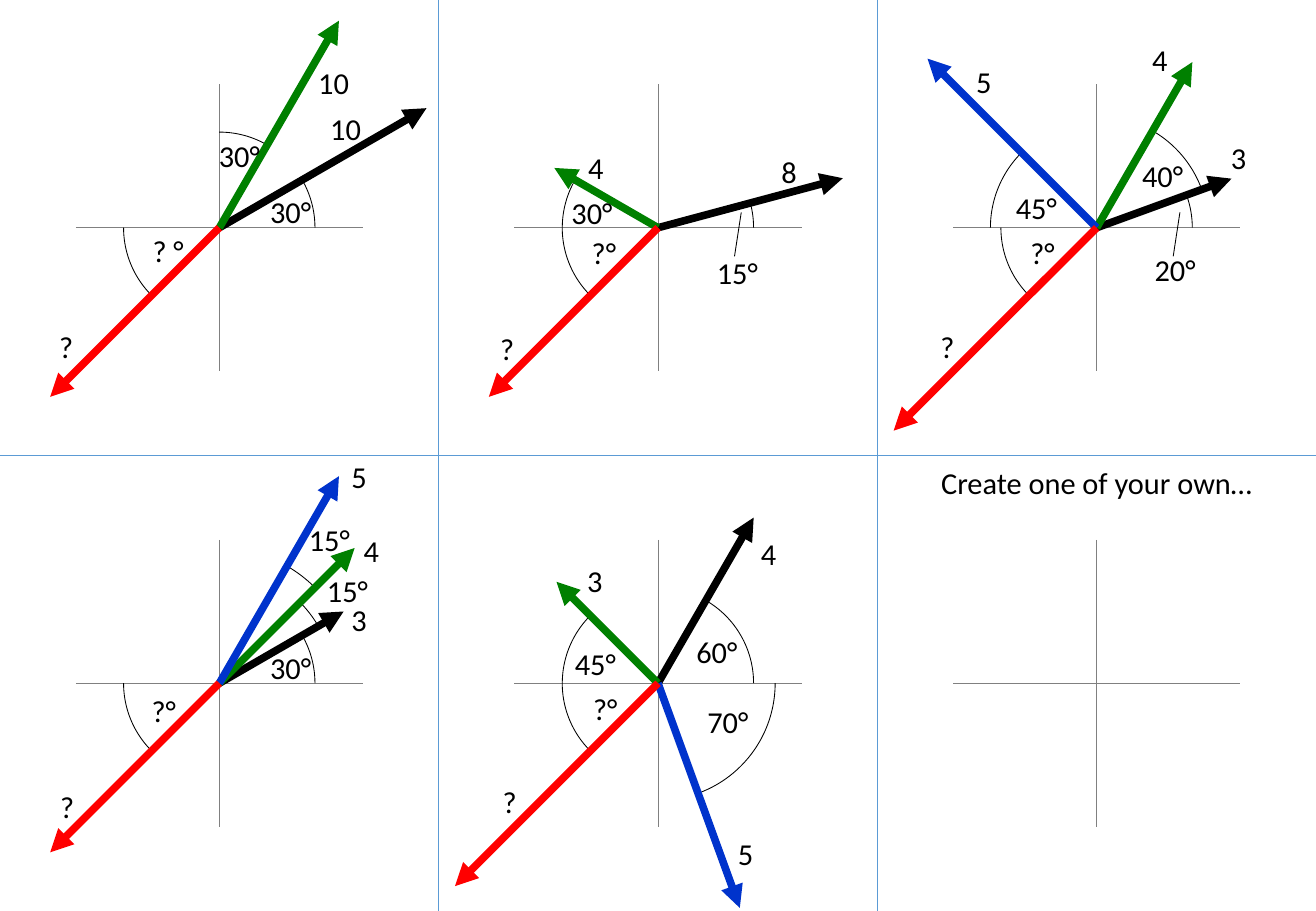
from math import cos, radians, sin

from lxml import etree
from pptx import Presentation
from pptx.dml.color import RGBColor
from pptx.enum.shapes import MSO_CONNECTOR, MSO_SHAPE
from pptx.enum.text import PP_ALIGN
from pptx.oxml.ns import qn
from pptx.util import Cm, Pt

STRAIGHT = MSO_CONNECTOR.STRAIGHT
ARC = MSO_SHAPE.ARC
CENTER = PP_ALIGN.CENTER

COLORS = {"black": "000000", "green": "008000", "blue": "0033CC", "red": "FF0000",
          "axis": "808080", "divider": "5B9BD5", "white": "FFFFFF"}
WIDTH, HEIGHT = 27.51, 19.05
COLS, ROWS = 3, 2
CELL_W, CELL_H = WIDTH / COLS, HEIGHT / ROWS
AXIS = 3  # half length of each axis
R = 2     # usual arc radius

# Lengths in cm, angles in degrees counterclockwise from the right,
# label centres measured right and down from the panel's origin
# arrows: colour, length, angle / arcs: radius, from, to / labels: text, x, y
PANELS = [
    {"arrows": [("black", 5, 30), ("green", 5, 60), ("red", 5, 225)],
     "arcs": [(R, 0, 30), (R, 60, 90), (R, 180, 225)],
     "labels": [("10", 2.64, -2.07), ("10", 2.39, -3.04), ("30°", 1.49, -0.34),
                ("30°", 0.42, -1.51), ("? °", -1.07, 0.47), ("?", -3.2, 2.48)]},
    {"arrows": [("black", 4, 15), ("green", 2.5, 150), ("red", 5, 225)],
     "arcs": [(R, 0, 15), (R, 150, 180), (R, 180, 225)],
     "labels": [("8", 2.74, -1.18), ("4", -1.3, -1.26), ("15°", 1.66, 0.93),
                ("30°", -1.38, -0.32), ("?°", -1.13, 0.52), ("?", -3.15, 2.53)],
     "leader": True},
    {"arrows": [("black", 3, 20), ("green", 4, 60), ("blue", 5, 135), ("red", 6, 225)],
     "arcs": [(R, 0, 20), (2.34, 20, 60), (2.22, 135, 180), (R, 180, 225)],
     "labels": [("3", 2.97, -1.46), ("4", 1.32, -3.52), ("5", -2.36, -3.06),
                ("20°", 1.64, 0.88), ("40°", 1.38, -1.1), ("45°", -1.26, -0.42),
                ("?°", -1.13, 0.52), ("?", -3.12, 2.48)],
     "leader": True},
    {"arrows": [("black", 3, 30), ("green", 4, 45), ("blue", 5, 60), ("red", 5, 225)],
     "arcs": [(R, 0, 30), (2.39, 30, 45), (2.83, 45, 60), (R, 180, 225)],
     "labels": [("3", 2.92, -1.33), ("4", 3.18, -2.78), ("5", 2.92, -4.33),
                ("30°", 1.49, -0.32), ("15°", 2.68, -1.94), ("15°", 2.3, -3.01),
                ("?°", -1.16, 0.57), ("?", -3.18, 2.58)]},
    {"arrows": [("black", 4, 60), ("blue", 5, -70), ("green", 3, 135), ("red", 6, 225)],
     "arcs": [(R, 0, 60), (2.45, -70, 0), (R, 135, 180), (R, 180, 225)],
     "labels": [("4", 2.31, -2.71), ("5", 1.83, 3.57), ("3", -1.32, -2.15),
                ("60°", 1.23, -0.67), ("70°", 1.46, 0.8), ("45°", -1.31, -0.42),
                ("?°", -1.1, 0.52), ("?", -3.1, 2.48)]},
    {"arrows": [], "arcs": [], "labels": []},
]

prs = Presentation()
prs.slide_width, prs.slide_height = Cm(WIDTH), Cm(HEIGHT)
slide = prs.slides.add_slide(prs.slide_layouts[6])
shapes = slide.shapes


def add_line(x1, y1, x2, y2, color="black", width=0.5, arrow=False):
    ln = shapes.add_connector(STRAIGHT, Cm(x1), Cm(y1), Cm(x2), Cm(y2))
    ln.line.color.rgb = RGBColor.from_string(COLORS[color])
    ln.line.width = Pt(width)
    if arrow:
        etree.SubElement(ln.line._get_or_add_ln(), qn("a:tailEnd"), type="triangle")
    etree.SubElement(ln._element.spPr, qn("a:effectLst"))


def add_text(text, x, y, width=1.83, height=1.02, size=18, color="black", fill=None):
    sp = shapes.add_textbox(Cm(x - width / 2), Cm(y - height / 2), Cm(width), Cm(height))
    if fill:
        sp.fill.solid()
        sp.fill.fore_color.rgb = RGBColor.from_string(COLORS[fill])
    tf = sp.text_frame
    tf.word_wrap = True
    p = tf.paragraphs[0]
    p.alignment = CENTER
    r = p.add_run()
    r.text = text
    r.font.name = "Calibri"
    r.font.size = Pt(size)
    r.font.color.rgb = RGBColor.from_string(COLORS[color])


# Dividers between the panels
for row in range(1, ROWS):
    add_line(0, row * CELL_H, WIDTH, row * CELL_H, "divider")
for col in range(1, COLS):
    add_line(col * CELL_W, 0, col * CELL_W, HEIGHT, "divider")

for i, panel in enumerate(PANELS):
    row, col = divmod(i, COLS)
    ox, oy = (col + 0.5) * CELL_W, (row + 0.5) * CELL_H

    # Axes
    add_line(ox - AXIS, oy, ox + AXIS, oy, "axis")
    add_line(ox, oy - AXIS, ox, oy + AXIS, "axis")

    # Angle arcs; the preset runs clockwise, 0.6 adjustment units per degree
    for radius, start, end in panel["arcs"]:
        sp = shapes.add_shape(ARC, Cm(ox - radius), Cm(oy - radius),
                              Cm(2 * radius), Cm(2 * radius))
        sp.adjustments[0] = -end % 360 * 0.6
        sp.adjustments[1] = -start % 360 * 0.6
        sp.shadow.inherit = False
        sp.fill.background()
        sp.line.color.rgb = RGBColor.from_string(COLORS["black"])
        sp.line.width = Pt(0.5)

    # Force arrows
    for color, length, angle in panel["arrows"]:
        a = radians(angle)
        add_line(ox, oy, ox + length * cos(a), oy - length * sin(a), color, 4.5, arrow=True)

    # Leader to a narrow angle, then labels
    if panel.get("leader"):
        add_line(ox + 1.6, oy + 0.6, ox + 1.74, oy - 0.32)
    for text, x, y in panel["labels"]:
        add_text(text, ox + x, oy + y)

# Heading of the empty last panel
add_text("Create one of your own…", ox, oy - 4.2, width=9.12, fill="white")

prs.save("out.pptx")
